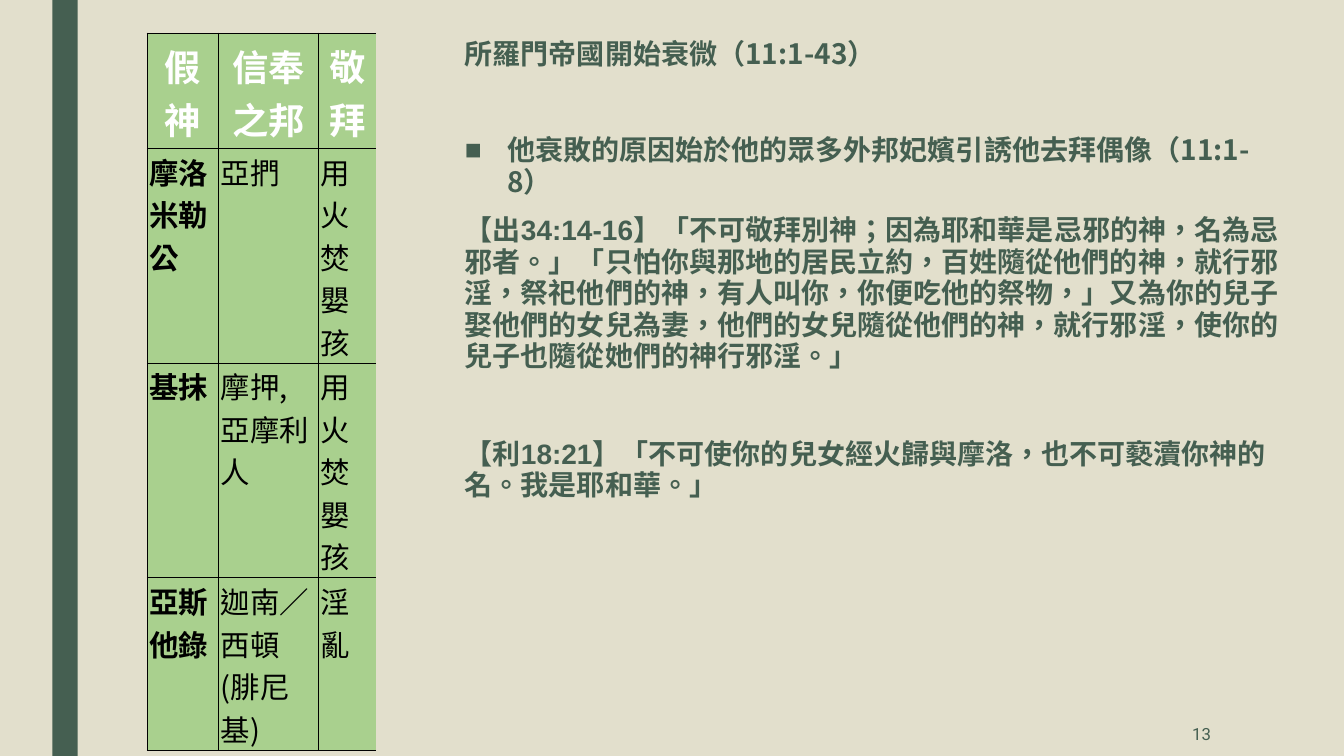
import pptx
import pptx.dml.color
import pptx.enum.shapes
import pptx.enum.text
import pptx.util
from lxml import etree
from pptx.oxml.ns import qn

Inches, Pt = pptx.util.Inches, pptx.util.Pt
PP_ALIGN, ANCHOR = pptx.enum.text.PP_ALIGN, pptx.enum.text.MSO_ANCHOR

THEME = {
    "paper": "E2DFCC", "green": "455F51", "cell": "A9D08E",
    "white": "FFFFFF", "black": "000000",
    "body": 20, "header": 26, "entry": 21, "number": 12,
    "sans": "Roboto", "plain": "Arial",
    "tc": "Noto Sans CJK TC", "sc": "Noto Sans CJK SC",
}

# Each passage: (font, text) runs, space before in points, bulleted or not
PASSAGES = [
    ([(THEME["sans"], "所羅門帝國開始衰微（"), (THEME["tc"], "11:1-43）")], 10, False),
    ([(THEME["sans"], "他衰敗的原因始於他的眾多外邦妃嬪引誘他去拜偶像（"),
      (THEME["tc"], "11:1-8）")], 44, True),
    ([(THEME["plain"],
       "【出34:14-16】「不可敬拜別神；因為耶和華是忌邪的神，名為忌邪者。」"
       "「只怕你與那地的居民立約，百姓隨從他們的神，就行邪淫，祭祀他們的神，"
       "有人叫你，你便吃他的祭物，」又為你的兒子娶他們的女兒為妻，"
       "他們的女兒隨從他們的神，就行邪淫，使你的兒子也隨從她們的神行邪淫。」")], 10, False),
    ([(THEME["plain"],
       "【利18:21】「不可使你的兒女經火歸與摩洛，也不可褻瀆你神的名。我是耶和華。」")],
     45, False),
]
# Every cell is a list of paragraphs
IDOLS = [
    [["假神"], ["信奉之邦"], ["敬拜"]],
    [["摩洛", "米勒公"], ["亞捫"], ["用火焚嬰孩"]],
    [["基抹"], ["摩押,亞摩利人"], ["用火焚", "嬰孩"]],
    [["亞斯他錄"], ["迦南／西頓(腓尼基)"], ["淫亂"]],
]
COLUMN_WIDTHS = [0.71, 0.99, 0.57]
# Tall enough for the wrapped lines: two header lines, then five, five and four
ROW_HEIGHTS = [1.14, 2.13, 2.13, 1.71]


def rgb(name):
    """Return a theme colour."""
    return pptx.dml.color.RGBColor.from_string(THEME[name])


def write(paragraph, text, *, size, color, latin, asian, bold=False, align=None):
    """Add one formatted run to a paragraph."""
    run = paragraph.add_run()
    run.text = text
    font = run.font
    font.size, font.bold, font.name = Pt(THEME[size]), bold, latin
    font.color.rgb = rgb(color)
    props = run._r.get_or_add_rPr()
    props.set("lang", "zh-TW")
    etree.SubElement(props, qn("a:ea")).set("typeface", asian)
    if align is not None:
        paragraph.alignment = align


def set_bullet(paragraph, bulleted):
    """Give a paragraph a hanging square bullet, or none."""
    props = paragraph._p.get_or_add_pPr()
    hang = Inches(0.42) if bulleted else 0
    props.set("marL", str(hang))
    props.set("indent", str(-hang))
    if bulleted:
        etree.SubElement(props, qn("a:buFont")).set("typeface", "Arial")
        etree.SubElement(props, qn("a:buChar")).set("char", "■")
    else:
        etree.SubElement(props, qn("a:buNone"))


def set_borders(cell, widths):
    """Draw the cell's edges; a width of 0 leaves that edge open."""
    props = cell._tc.get_or_add_tcPr()
    for place, (side, width) in enumerate(widths.items()):
        edge = etree.Element(qn(f"a:ln{side}"))
        edge.set("w", str(Pt(width)))
        if width:
            fill = etree.SubElement(edge, qn("a:solidFill"))
            etree.SubElement(fill, qn("a:srgbClr")).set("val", THEME["black"])
        else:
            etree.SubElement(edge, qn("a:noFill"))
        props.insert(place, edge)


def add_side_bar(slide):
    """Draw the vertical bar at the left."""
    bar = slide.shapes.add_shape(pptx.enum.shapes.MSO_SHAPE.RECTANGLE,
                                 Inches(0.52), 0, Inches(0.25), Inches(7.5))
    bar.shadow.inherit = False
    bar.fill.solid()
    bar.fill.fore_color.rgb = rgb("green")
    bar.line.fill.background()


def add_passages(slide):
    """Fill the body placeholder with the heading and scripture."""
    body = slide.placeholders[1]
    body.left, body.top = Inches(4.51), Inches(0.34)
    body.width, body.height = Inches(8.38), Inches(5.28)
    frame = body.text_frame
    frame.word_wrap = True
    frame.auto_size = pptx.enum.text.MSO_AUTO_SIZE.NONE
    frame.vertical_anchor = ANCHOR.TOP
    for index, (runs, before, bulleted) in enumerate(PASSAGES):
        paragraph = frame.add_paragraph() if index else frame.paragraphs[0]
        paragraph.line_spacing = 0.94
        paragraph.space_before, paragraph.space_after = Pt(before), Pt(2)
        set_bullet(paragraph, bulleted)
        for latin, text in runs:
            write(paragraph, text, size="body", color="green", latin=latin,
                  asian=THEME["tc"], bold=True)


def add_idol_table(slide):
    """Build the table of false gods, their nations and worship."""
    table = slide.shapes.add_table(
        len(IDOLS), len(COLUMN_WIDTHS), Inches(1.46), Inches(0.33),
        Inches(sum(COLUMN_WIDTHS)), Inches(sum(ROW_HEIGHTS))).table
    table.horz_banding = False
    for column, width in zip(table.columns, COLUMN_WIDTHS):
        column.width = Inches(width)
    for row, height in zip(table.rows, ROW_HEIGHTS):
        row.height = Inches(height)
    last = len(COLUMN_WIDTHS) - 1
    for r, entries in enumerate(IDOLS):
        for c, lines in enumerate(entries):
            cell, header = table.cell(r, c), r == 0
            cell.margin_left = cell.margin_right = cell.margin_top = Inches(0.02)
            cell.margin_bottom = 0
            cell.vertical_anchor = ANCHOR.MIDDLE if header else ANCHOR.TOP
            cell.fill.solid()
            cell.fill.fore_color.rgb = rgb("cell")
            set_borders(cell, {"L": 1 if header and c == 0 else 0.5,
                               "R": 0 if c == last else 0.5,
                               "T": 1 if header else 0.5, "B": 0.5})
            frame = cell.text_frame
            for index, line in enumerate(lines):
                paragraph = frame.add_paragraph() if index else frame.paragraphs[0]
                write(paragraph, line, size="header" if header else "entry",
                      color="white" if header else "black",
                      latin=THEME["plain" if c == 0 and not header else "sc"],
                      asian=THEME["sc"], bold=header or c == 0,
                      align=PP_ALIGN.CENTER if header else PP_ALIGN.LEFT)


def add_page_number(slide):
    """Put the page number at the lower right."""
    frame = slide.shapes.add_textbox(Inches(10.36), Inches(7.06),
                                     Inches(1.75), Inches(0.44)).text_frame
    frame.word_wrap = True
    frame.vertical_anchor = ANCHOR.MIDDLE
    frame.paragraphs[0].space_after = Pt(6)
    write(frame.paragraphs[0], "13", size="number", color="green",
          latin=THEME["sans"], asian=THEME["tc"], align=PP_ALIGN.RIGHT)


deck = pptx.Presentation()
deck.slide_width, deck.slide_height = Inches(13.33), Inches(7.5)
slide = deck.slides.add_slide(deck.slide_layouts[1])
slide.background.fill.solid()
slide.background.fill.fore_color.rgb = rgb("paper")
unused_title = slide.shapes.title.element
unused_title.getparent().remove(unused_title)
add_side_bar(slide)
add_passages(slide)
add_page_number(slide)
add_idol_table(slide)
deck.save("out.pptx")
